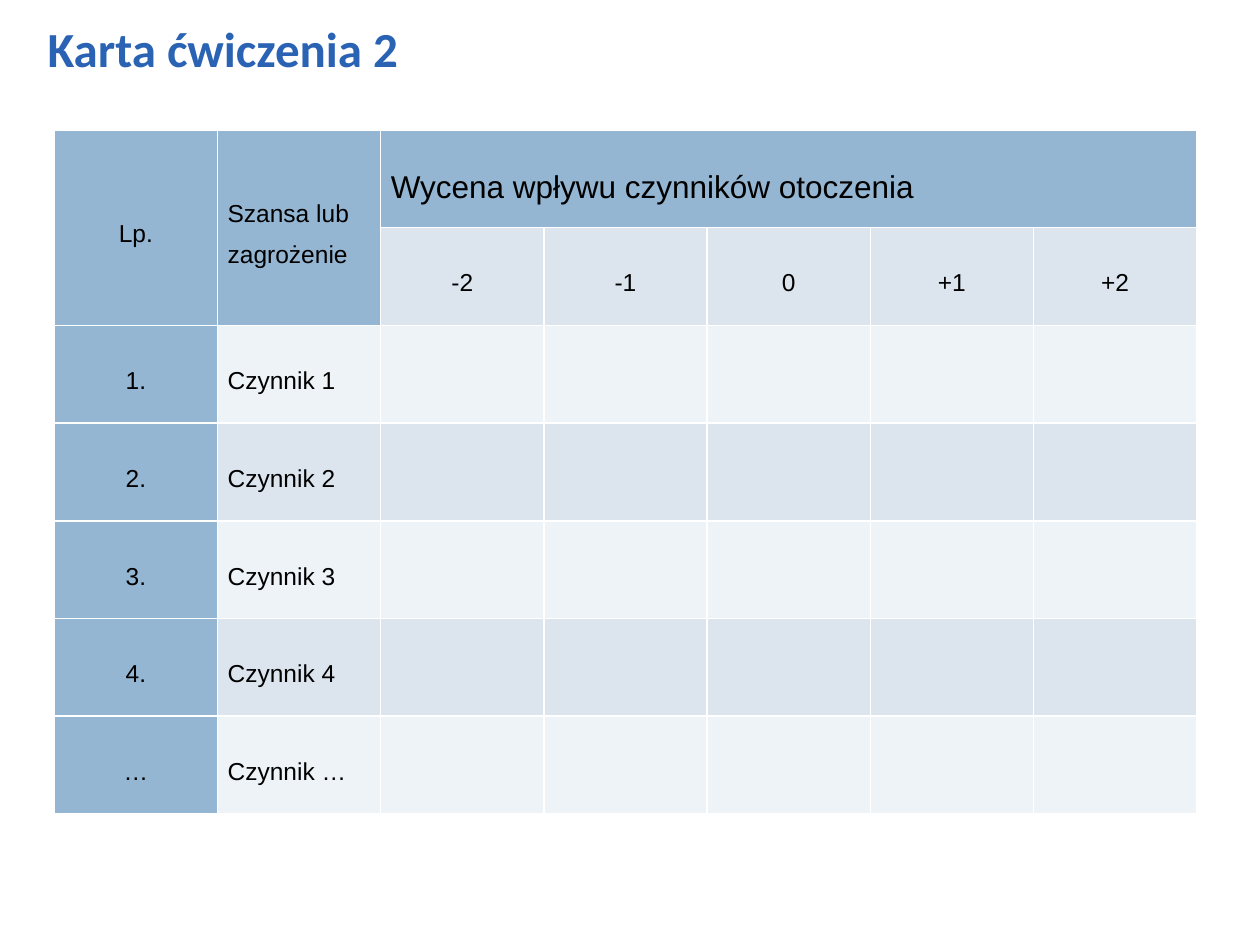
from lxml.etree import fromstring
from pptx import Presentation
from pptx.dml.color import RGBColor
from pptx.enum.text import MSO_ANCHOR, MSO_AUTO_SIZE, PP_ALIGN
from pptx.oxml.ns import nsdecls
from pptx.util import Pt

BLACK = RGBColor(0x00, 0x00, 0x00)
TITLE_BLUE = RGBColor(0x2A, 0x63, 0xB4)
HEADER_BLUE = RGBColor(0x94, 0xB6, 0xD2)
BAND_DARK = RGBColor(0xDC, 0xE5, 0xEE)
BAND_LIGHT = RGBColor(0xEE, 0xF3, 0xF7)

TITLE = "Karta ćwiczenia 2"
ROWS = [
    ["Lp.", "Szansa lub zagrożenie", "Wycena wpływu czynników otoczenia", "", "", "", ""],
    ["", "", "-2", "-1", "0", "+1", "+2"],
    *[[number, f"Czynnik {name}", "", "", "", "", ""]
      for number, name in [("1.", "1"), ("2.", "2"), ("3.", "3"), ("4.", "4"), ("…", "…")]],
]
MERGES = [((0, 0), (1, 0)), ((0, 1), (1, 1)), ((0, 2), (0, 6))]
TABLE_LEFT, TABLE_TOP, TABLE_WIDTH, TABLE_HEIGHT = 31, 74.2, 653, 391


def write(frame, text, *, font="Arial", size=14, color=BLACK, bold=False,
          align=PP_ALIGN.LEFT, line_spacing=1.0, space_after=0):
    para = frame.paragraphs[0]
    para.alignment = align
    para.line_spacing = line_spacing
    para.space_before = Pt(0)
    para.space_after = Pt(space_after)
    span = para.add_run()
    span.text = text
    span.font.name = font
    span.font.size = Pt(size)
    span.font.bold = bold
    span.font.color.rgb = color


def add_borders(cell):
    properties = cell._tc.get_or_add_tcPr()
    for index, side in enumerate(["lnL", "lnR", "lnT", "lnB"]):
        properties.insert(index, fromstring(
            f'<a:{side} {nsdecls("a")} w="{Pt(1)}"><a:solidFill>'
            f'<a:srgbClr val="FFFFFF"/></a:solidFill></a:{side}>'))


def cell_fill(row, column):
    if row == 0 or column == 0 or (row == 1 and column == 1):
        return HEADER_BLUE
    return BAND_DARK if row % 2 else BAND_LIGHT


def add_title(page):
    box = page.shapes.title
    box.left, box.top, box.width, box.height = Pt(20), Pt(7.2), Pt(572), Pt(41)
    frame = box.text_frame
    frame.word_wrap = True
    frame.auto_size = MSO_AUTO_SIZE.SHAPE_TO_FIT_TEXT
    frame.vertical_anchor = MSO_ANCHOR.TOP
    write(frame, TITLE, font="Calibri", size=28, color=TITLE_BLUE, bold=True)


def add_worksheet(page):
    table = page.shapes.add_table(len(ROWS), len(ROWS[0]), Pt(TABLE_LEFT), Pt(TABLE_TOP),
                                  Pt(TABLE_WIDTH), Pt(TABLE_HEIGHT)).table
    for first, last in MERGES:
        table.cell(*first).merge(table.cell(*last))
    for row, texts in enumerate(ROWS):
        for column, text in enumerate(texts):
            cell = table.cell(row, column)
            cell.fill.solid()
            cell.fill.fore_color.rgb = cell_fill(row, column)
            add_borders(cell)
            cell.vertical_anchor = MSO_ANCHOR.MIDDLE
            cell.margin_left = cell.margin_right = Pt(5.8)
            cell.margin_top = cell.margin_bottom = Pt(1.4)
            if text:
                centred = column == 0 or row == 1
                write(cell.text_frame, text, size=18 if (row, column) == (0, 2) else 14,
                      align=PP_ALIGN.CENTER if centred else PP_ALIGN.LEFT,
                      line_spacing=1.5, space_after=10)


def main():
    deck = Presentation()
    deck.slide_width, deck.slide_height = Pt(720), Pt(540)
    page = deck.slides.add_slide(deck.slide_layouts[5])
    add_worksheet(page)
    add_title(page)
    deck.save("out.pptx")


if __name__ == "__main__":
    main()
